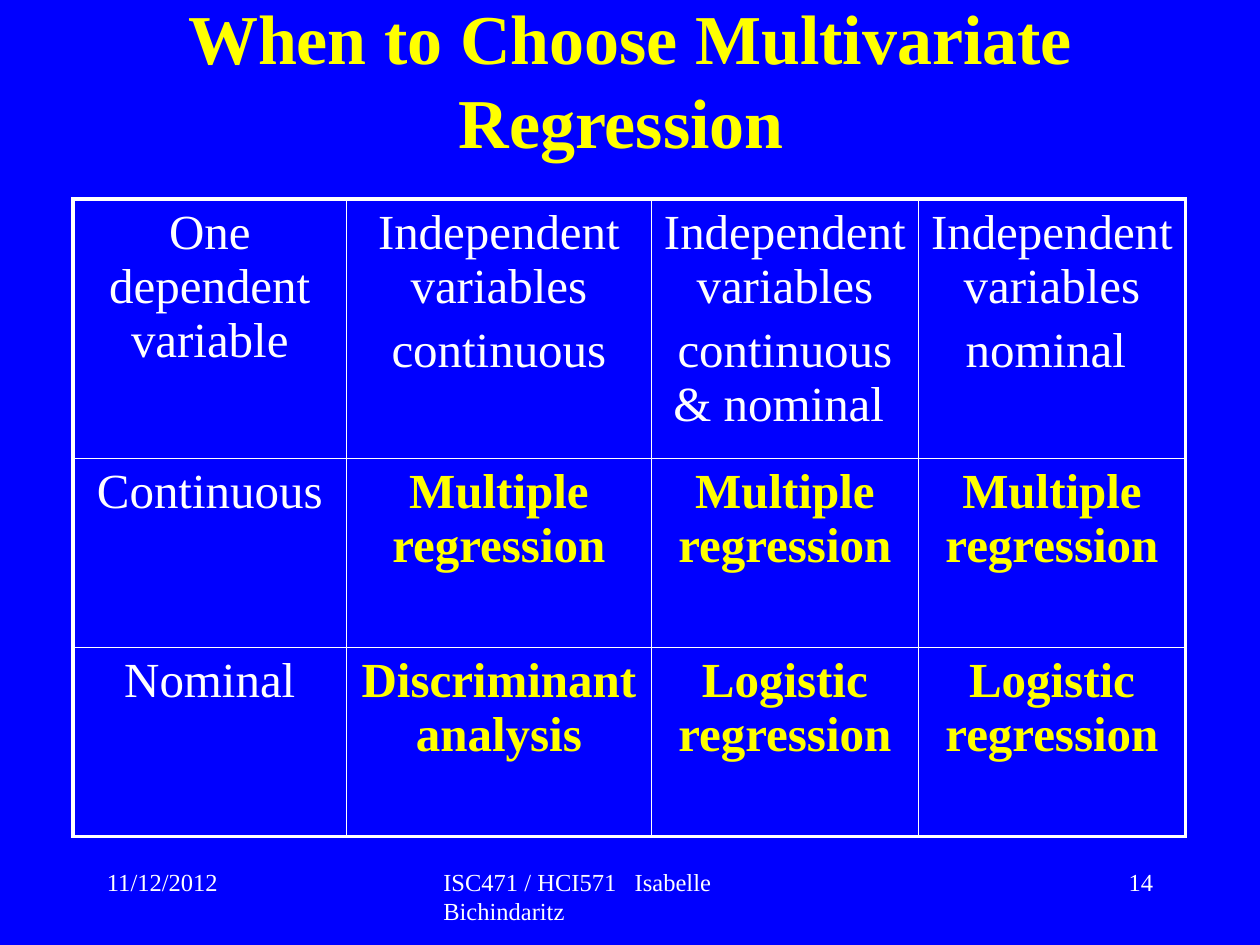
import dataclasses

import lxml.etree
import pptx
import pptx.dml.color
import pptx.enum.text
import pptx.oxml.ns
import pptx.util

Inches = pptx.util.Inches
Align = pptx.enum.text.PP_ALIGN
Anchor = pptx.enum.text.MSO_ANCHOR


@dataclasses.dataclass(frozen=True)
class Theme:
    font: str = "Times New Roman"
    background: str = "0000FF"
    text: str = "FFFFFF"
    accent: str = "FFFF00"
    title_size: float = 40
    table_size: float = 28
    footer_size: float = 14
    paragraph_gap: float = 5.6
    outer_border: float = 2.25
    inner_border: float = 1


class SlideBuilder:
    def __init__(self, presentation, theme):
        self.theme = theme
        self.slide = presentation.slides.add_slide(presentation.slide_layouts[5])
        fill = self.slide.background.fill
        fill.solid()
        fill.fore_color.rgb = pptx.dml.color.RGBColor.from_string(theme.background)

    def add_lines(self, frame, lines, size, color, bold=False, align=Align.LEFT, gap=0):
        font_format = {"name": self.theme.font, "size": pptx.util.Pt(size), "bold": bold}
        for index, line in enumerate(lines):
            paragraph = frame.add_paragraph() if index else frame.paragraphs[0]
            paragraph.alignment = align
            paragraph.space_before = pptx.util.Pt(gap)
            run = paragraph.add_run()
            run.text = line
            for name, value in font_format.items():
                setattr(run.font, name, value)
            run.font.color.rgb = pptx.dml.color.RGBColor.from_string(color)

    def title(self, text, left, top, width, height):
        shape = self.slide.shapes.title
        position = {"left": left, "top": top, "width": width, "height": height}
        for name, value in position.items():
            setattr(shape, name, Inches(value))
        frame_format = {
            "word_wrap": True,
            "auto_size": pptx.enum.text.MSO_AUTO_SIZE.NONE,
            "vertical_anchor": Anchor.MIDDLE,
        }
        for name, value in frame_format.items():
            setattr(shape.text_frame, name, value)
        self.add_lines(shape.text_frame, [text], self.theme.title_size,
                       self.theme.accent, True, Align.CENTER)

    def footer(self, text, left, width, align=Align.LEFT):
        shape = self.slide.shapes.add_textbox(
            Inches(left), Inches(6.83), Inches(width), Inches(0.5))
        shape.text_frame.word_wrap = True
        self.add_lines(shape.text_frame, [text], self.theme.footer_size,
                       self.theme.text, align=align)

    def border(self, cell, outer_sides):
        properties = cell._tc.get_or_add_tcPr()
        for index, side in enumerate(("L", "R", "T", "B")):
            points = self.theme.outer_border if side in outer_sides else self.theme.inner_border
            line = lxml.etree.Element(
                pptx.oxml.ns.qn(f"a:ln{side}"), w=str(pptx.util.Pt(points)))
            fill = lxml.etree.SubElement(line, pptx.oxml.ns.qn("a:solidFill"))
            lxml.etree.SubElement(fill, pptx.oxml.ns.qn("a:srgbClr"), val=self.theme.text)
            properties.insert(index, line)

    def table(self, rows, left, top, widths, heights):
        table = self.slide.shapes.add_table(
            len(heights), len(widths), Inches(left), Inches(top),
            Inches(sum(widths)), Inches(sum(heights))).table
        table.first_row = table.horz_banding = False
        for column, width in zip(table.columns, widths):
            column.width = Inches(width)
        for row, height in zip(table.rows, heights):
            row.height = Inches(height)
        last_row, last_column = len(heights) - 1, len(widths) - 1
        for row_index, row in enumerate(rows):
            for column_index, lines in enumerate(row):
                cell = table.cell(row_index, column_index)
                cell.fill.background()
                edges = {"L": column_index == 0, "R": column_index == last_column,
                         "T": row_index == 0, "B": row_index == last_row}
                self.border(cell, [side for side, outer in edges.items() if outer])
                is_method = row_index > 0 and column_index > 0
                color = self.theme.accent if is_method else self.theme.text
                self.add_lines(cell.text_frame, lines, self.theme.table_size, color,
                               is_method, Align.CENTER, self.theme.paragraph_gap)


def main():
    presentation = pptx.Presentation()
    presentation.slide_width = Inches(10)
    presentation.slide_height = Inches(7.5)
    builder = SlideBuilder(presentation, Theme())

    builder.title("When to Choose Multivariate Regression ", 0.75, 0, 8.5, 1.25)
    independent = "Independent variables"
    multiple = ["Multiple regression"]
    logistic = ["Logistic regression"]
    builder.table(
        [
            [["One dependent variable"], [independent, "continuous"],
             [independent, "continuous & nominal "], [independent, "nominal "]],
            [["Continuous"], multiple, multiple, multiple],
            [["Nominal"], ["Discriminant analysis"], logistic, logistic],
        ],
        0.58, 1.58, [2.17, 2.42, 2.12, 2.12], [2.06, 1.5, 1.5])
    builder.footer("11/12/2012", 0.75, 2.08)
    builder.footer("ISC471 / HCI571   Isabelle Bichindaritz", 3.42, 3.17)
    builder.footer("14", 7.17, 2.08, Align.RIGHT)

    presentation.save("out.pptx")


if __name__ == "__main__":
    main()
